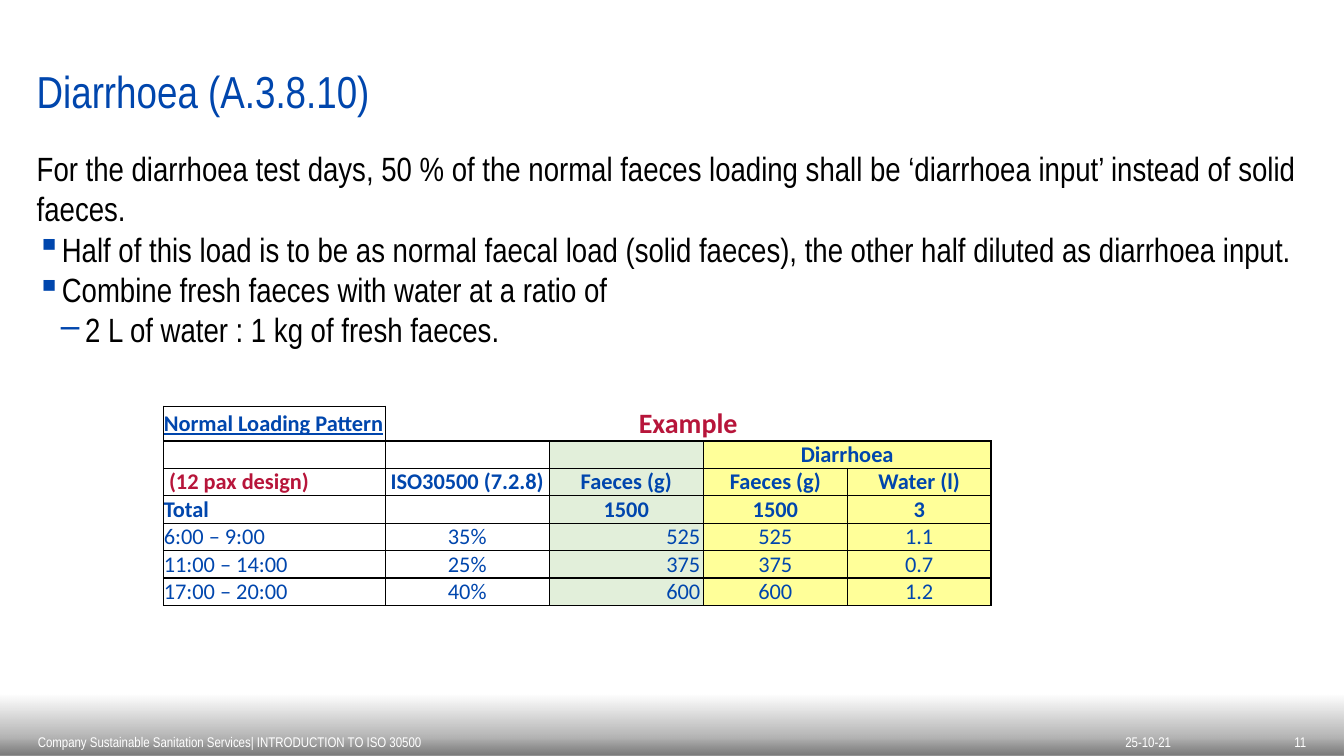
"""Build the diarrhoea test loading slide."""
from lxml.etree import SubElement
from pptx import Presentation
from pptx.dml.color import RGBColor
from pptx.enum.shapes import MSO_SHAPE as Shape
from pptx.enum.text import MSO_ANCHOR as Anchor, MSO_AUTO_SIZE as AutoSize, PP_ALIGN as Align
from pptx.oxml import parse_xml
from pptx.oxml.ns import nsdecls, qn
from pptx.util import Pt

PX = 9525
BLUE = RGBColor(0x00, 0x46, 0xAD)
RED = RGBColor(0xB7, 0x15, 0x3A)
BLACK = RGBColor(0x00, 0x00, 0x00)
WHITE = RGBColor(0xFF, 0xFF, 0xFF)
GREEN = RGBColor(0xE2, 0xEF, 0xDA)
YELLOW = RGBColor(0xFF, 0xFF, 0x99)

BODY = [
    ("For the diarrhoea test days, 50 % of the normal faeces loading shall be "
     "‘diarrhoea input’ instead of solid faeces.", None, 0),
    ("Half of this load is to be as normal faecal load (solid faeces), "
     "the other half diluted as diarrhoea input.", "▪", 0),
    ("Combine fresh faeces with water at a ratio of", "▪", 0),
    ("2 L of water : 1 kg of fresh faeces.", "–", 1),
]
LOADING = [
    ["Normal Loading Pattern", "Example", "", "", ""],
    ["", "", "", "Diarrhoea", ""],
    ["(12 pax design)", "ISO30500 (7.2.8)", "Faeces (g)", "Faeces (g)", "Water (l)"],
    ["Total", "", "1500", "1500", "3"],
    ["6:00 – 9:00", "35%", "525", "525", "1.1"],
    ["11:00 – 14:00", "25%", "375", "375", "0.7"],
    ["17:00 – 20:00", "40%", "600", "600", "1.2"],
]
COLUMN_WIDTHS = [211, 156, 147, 137, 137]
COLUMN_FILLS = [None, None, GREEN, YELLOW, YELLOW]
ROW_HEIGHTS = [33] + [26] * 6
FOOTER_STOPS = [(0, "212121", 60), (29, "000000", 30), (100, "000000", 0)]


def write_text(paragraph, text, size=10, color=WHITE, font="Arial Narrow",
               bold=False, underline=False, align=Align.LEFT):
    paragraph.alignment = align
    if not text:
        SubElement(paragraph._p, qn("a:endParaRPr"), sz=str(size * 100))
        return
    run = paragraph.add_run()
    run.text = text
    run.font.size = Pt(size)
    run.font.name = font
    run.font.bold = bold
    run.font.underline = underline
    run.font.color.rgb = color


class LoadingSlide:
    def __init__(self, presentation):
        self.slide = presentation.slides.add_slide(presentation.slide_layouts[5])

    def frame(self, shape, margins, anchor):
        text_frame = shape.text_frame
        text_frame.word_wrap = True
        text_frame.auto_size = AutoSize.NONE
        text_frame.vertical_anchor = anchor
        (text_frame.margin_left, text_frame.margin_top,
         text_frame.margin_right, text_frame.margin_bottom) = [m * PX for m in margins]
        return text_frame

    def text_box(self, box, margins=(0, 0, 0, 0), anchor=Anchor.TOP):
        shape = self.slide.shapes.add_textbox(*[value * PX for value in box])
        return self.frame(shape, margins, anchor)

    def title(self, text, box):
        shape = self.slide.shapes.title
        shape.left, shape.top, shape.width, shape.height = [value * PX for value in box]
        text_frame = self.frame(shape, (0, 0, 0, 0), Anchor.TOP)
        write_text(text_frame.paragraphs[0], text, size=32, color=BLUE)

    def body(self, items, box):
        text_frame = self.text_box(box)
        for index, (text, bullet, level) in enumerate(items):
            paragraph = text_frame.add_paragraph() if index else text_frame.paragraphs[0]
            if bullet:
                self.bullet(paragraph, bullet, level)
            write_text(paragraph, text, size=24, color=BLACK)

    def bullet(self, paragraph, character, level):
        paragraph.level = level
        properties = paragraph._p.get_or_add_pPr()
        properties.set("marL", str(23 * (level + 1) * PX))
        properties.set("indent", str(-23 * PX))
        color = SubElement(properties, qn("a:buClr"))
        SubElement(color, qn("a:srgbClr"), val=str(BLUE))
        SubElement(properties, qn("a:buChar"), char=character)

    def footer_bar(self, number, box):
        shape = self.slide.shapes.add_shape(Shape.RECTANGLE, *[value * PX for value in box])
        shape.shadow.inherit = False
        shape.line.fill.background()
        shape.fill.gradient()
        stops = "".join(
            f'<a:gs pos="{position * 1000}"><a:srgbClr val="{color}">'
            f'<a:alpha val="{opacity * 1000}"/></a:srgbClr></a:gs>'
            for position, color, opacity in FOOTER_STOPS)
        gradient = parse_xml(f'<a:gradFill {nsdecls("a")} rotWithShape="1"><a:gsLst>{stops}'
                             '</a:gsLst><a:lin ang="16200000" scaled="0"/></a:gradFill>')
        properties = shape._element.spPr
        properties.replace(properties.find(qn("a:gradFill")), gradient)
        text_frame = self.frame(shape, (36, 5, 36, 5), Anchor.BOTTOM)
        write_text(text_frame.paragraphs[0], number, align=Align.RIGHT)

    def footer_text(self, text, box, margins, align=Align.LEFT):
        text_frame = self.text_box(box, margins, Anchor.BOTTOM)
        write_text(text_frame.paragraphs[0], text, align=align)

    def borders(self, cell, hidden):
        properties = cell._tc.get_or_add_tcPr()
        for side in "LRTB":
            line = SubElement(properties, qn(f"a:ln{side}"), w=str(Pt(1)))
            if side in hidden:
                SubElement(line, qn("a:noFill"))
            else:
                fill = SubElement(line, qn("a:solidFill"))
                SubElement(fill, qn("a:srgbClr"), val=str(BLACK))

    def cell(self, cell, text, row, column):
        example = row == 0 and column > 0
        numbers = row > 3 and column == 2
        design = row == 2 and column == 0
        self.borders(cell, "" if not example else "RT" if column == 1 else "LRT")
        if COLUMN_FILLS[column] and row:
            cell.fill.solid()
            cell.fill.fore_color.rgb = COLUMN_FILLS[column]
        else:
            cell.fill.background()
        cell.vertical_anchor = Anchor.MIDDLE
        cell.margin_top = cell.margin_bottom = 0
        cell.margin_left = 5 * PX if design else 0
        cell.margin_right = 3 * PX if numbers else 0
        align = Align.RIGHT if numbers else Align.CENTER if column else Align.LEFT
        write_text(cell.text_frame.paragraphs[0], text, font="Calibri",
                   size=20 if example else 16, color=RED if example or design else BLUE,
                   bold=row < 4, underline=row == 0 and column == 0, align=align)

    def table(self, rows, left, top):
        table = self.slide.shapes.add_table(
            len(rows), len(COLUMN_WIDTHS), left * PX, top * PX,
            sum(COLUMN_WIDTHS) * PX, sum(ROW_HEIGHTS) * PX).table
        table.first_row = table.horz_banding = False
        for column, width in zip(table.columns, COLUMN_WIDTHS):
            column.width = width * PX
        for row, height in zip(table.rows, ROW_HEIGHTS):
            row.height = height * PX
        for row, texts in enumerate(rows):
            for column, text in enumerate(texts):
                self.cell(table.cell(row, column), text, row, column)
        table.cell(0, 1).merge(table.cell(0, 4))
        table.cell(1, 3).merge(table.cell(1, 4))


def main():
    presentation = Presentation()
    presentation.slide_width = 1280 * PX
    presentation.slide_height = 720 * PX
    slide = LoadingSlide(presentation)
    slide.body(BODY, (35, 141, 1210, 492))
    slide.title("Diarrhoea (A.3.8.10)", (35, 61, 1210, 52))
    slide.footer_bar("11", (0, 662, 1280, 58))
    slide.footer_text("25-10-21", (1018, 693, 151, 27), (10, 5, 10, 5), Align.CENTER)
    slide.footer_text("Company Sustainable Sanitation Services| INTRODUCTION TO ISO 30500",
                      (0, 693, 912, 27), (36, 5, 0, 5))
    slide.table(LOADING, 156, 387)
    presentation.save("out.pptx")


if __name__ == "__main__":
    main()
